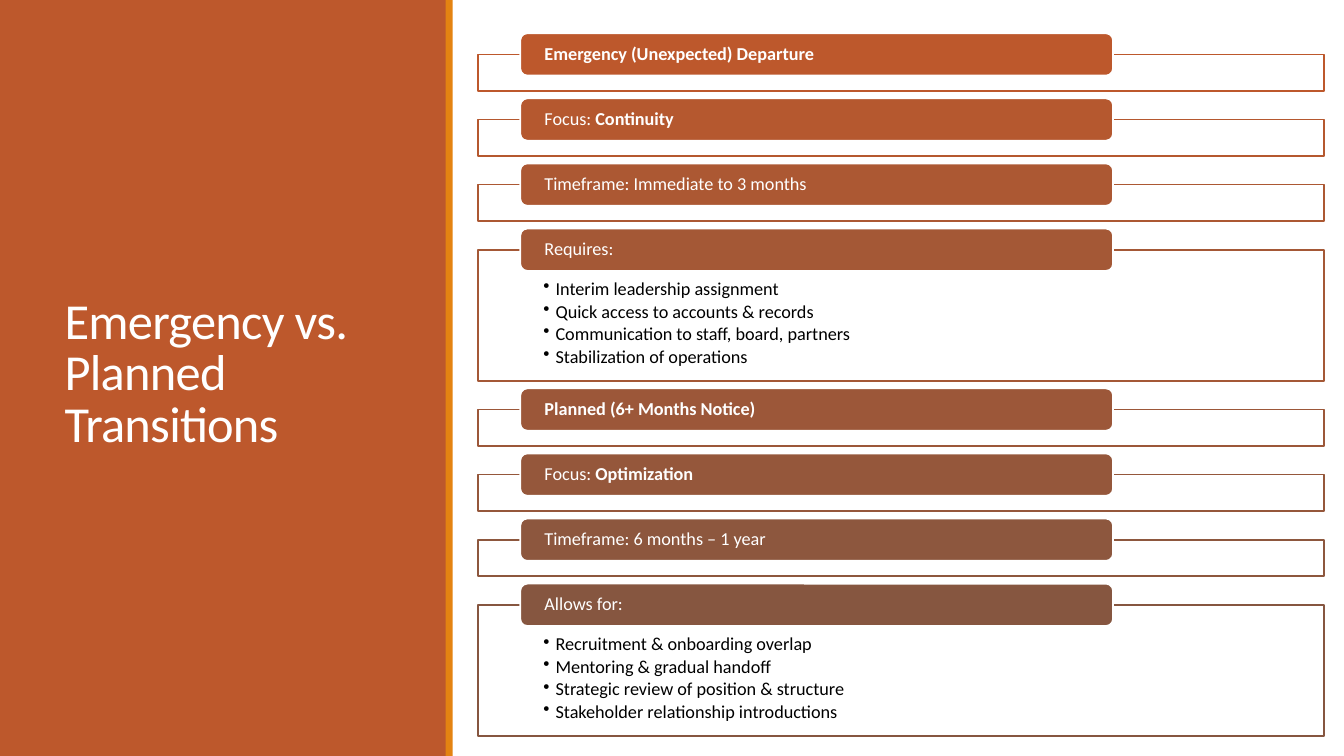
from lxml import etree
from pptx import Presentation
from pptx.dml.color import RGBColor
from pptx.enum.shapes import MSO_SHAPE
from pptx.enum.text import MSO_ANCHOR, PP_ALIGN
from pptx.oxml.ns import qn
from pptx.util import Inches, Pt

RECT, ROUNDED = MSO_SHAPE.RECTANGLE, MSO_SHAPE.ROUNDED_RECTANGLE
TOP, MIDDLE, LEFT = MSO_ANCHOR.TOP, MSO_ANCHOR.MIDDLE, PP_ALIGN.LEFT

TITLE = "Emergency vs. Planned Transitions"
# colour, plain label text, bold label text, bullets
SECTIONS = [
    ("BD582C", "", "Emergency (Unexpected) Departure", []),
    ("B5582F", "Focus: ", "Continuity", []),
    ("AC5833", "Timeframe: Immediate to 3 months", "", []),
    ("A45836", "Requires:", "", [
        "Interim leadership assignment",
        "Quick access to accounts & records",
        "Communication to staff, board, partners",
        "Stabilization of operations",
    ]),
    ("9C5739", "", "Planned (6+ Months Notice)", []),
    ("95573B", "Focus: ", "Optimization", []),
    ("8D573E", "Timeframe: 6 months – 1 year", "", []),
    ("865640", "Allows for:", "", [
        "Recruitment & onboarding overlap",
        "Mentoring & gradual handoff",
        "Strategic review of position & structure",
        "Stakeholder relationship introductions",
    ]),
]

FONT, WHITE, BLACK = "Calibri", "FFFFFF", "000000"
RUST, ORANGE = "BD582C", "E48312"
SLIDE_W, SLIDE_H = 13.33, 7.5
PANEL_W, STRIPE_W = 4.43, 0.07
FRAME_X, FRAME_W = 4.74, 8.39
FRAMES_TOP, FRAMES_BOTTOM = 0.54, 7.3
EMPTY_H, LIST_H = 0.36, 1.3
LABEL_X, LABEL_W, LABEL_H = 5.16, 5.88, 0.42
BULLET_INDENT = 0.12


def rgb(value):
    return RGBColor.from_string(value)


def add_box(slide, kind, box, fill, line=None):
    sp = slide.shapes.add_shape(kind, *map(Inches, box))
    sp.shadow.inherit = False
    sp.fill.solid()
    sp.fill.fore_color.rgb = rgb(fill)
    if line:
        sp.line.color.rgb = rgb(line)
        sp.line.width = Pt(1.25)
    else:
        sp.line.fill.background()
    return sp


def set_frame(tf, anchor, insets):
    tf.word_wrap = True
    tf.vertical_anchor = anchor
    (tf.margin_left, tf.margin_top,
     tf.margin_right, tf.margin_bottom) = map(Inches, insets)


def add_run(p, text, size, color, bold=False):
    r = p.add_run()
    r.text = text
    r.font.name, r.font.size, r.font.bold = FONT, Pt(size), bold
    r.font.color.rgb = rgb(color)
    return r


def add_bullets(tf, items):
    set_frame(tf, TOP, (0.65, 0.3, 0.65, 0.1))
    for i, item in enumerate(items):
        p = tf.paragraphs[0] if i == 0 else tf.add_paragraph()
        pPr = p._p.get_or_add_pPr()
        pPr.set("marL", str(Inches(BULLET_INDENT)))
        pPr.set("indent", str(-Inches(BULLET_INDENT)))
        etree.SubElement(pPr, qn("a:buChar")).set("char", "•")
        p.alignment, p.line_spacing, p.space_after = LEFT, 0.9, Pt(2)
        add_run(p, item, 13, BLACK)


def add_section(slide, y, height, color, plain, bold, bullets):
    frame = add_box(slide, RECT, (FRAME_X, y, FRAME_W, height), WHITE, color)
    if bullets:
        add_bullets(frame.text_frame, bullets)
    label = add_box(slide, ROUNDED,
                    (LABEL_X, y - LABEL_H / 2, LABEL_W, LABEL_H), color, WHITE)
    set_frame(label.text_frame, MIDDLE, (0.22, 0, 0.22, 0))
    p = label.text_frame.paragraphs[0]
    p.alignment, p.line_spacing = LEFT, 0.9
    for text, is_bold in ((plain, False), (bold, True)):
        if text:
            add_run(p, text, 13, WHITE, is_bold)


def add_title(slide):
    title = slide.shapes.title
    title.left, title.top, title.width, title.height = map(
        Inches, (0.54, 0.57, 3.37, 6.31))
    set_frame(title.text_frame, MIDDLE, (0.1, 0.05, 0.1, 0.05))
    p = title.text_frame.paragraphs[0]
    p.alignment, p.line_spacing = LEFT, 0.85
    r = add_run(p, TITLE, 36, WHITE)
    r.font._element.set("spc", "-50")
    slide.shapes._spTree.append(title._element)  # in front of the panel


def main():
    prs = Presentation()
    prs.slide_width, prs.slide_height = Inches(SLIDE_W), Inches(SLIDE_H)
    slide = prs.slides.add_slide(prs.slide_layouts[5])
    add_box(slide, RECT, (0, 0, PANEL_W, SLIDE_H), RUST)
    add_box(slide, RECT, (PANEL_W - 0.01, 0, STRIPE_W, SLIDE_H), ORANGE)
    add_title(slide)

    heights = [LIST_H if bullets else EMPTY_H for *_, bullets in SECTIONS]
    gap = (FRAMES_BOTTOM - FRAMES_TOP - sum(heights)) / (len(heights) - 1)
    y = FRAMES_TOP
    for height, section in zip(heights, SECTIONS):
        add_section(slide, y, height, *section)
        y += height + gap
    prs.save("out.pptx")


if __name__ == "__main__":
    main()
